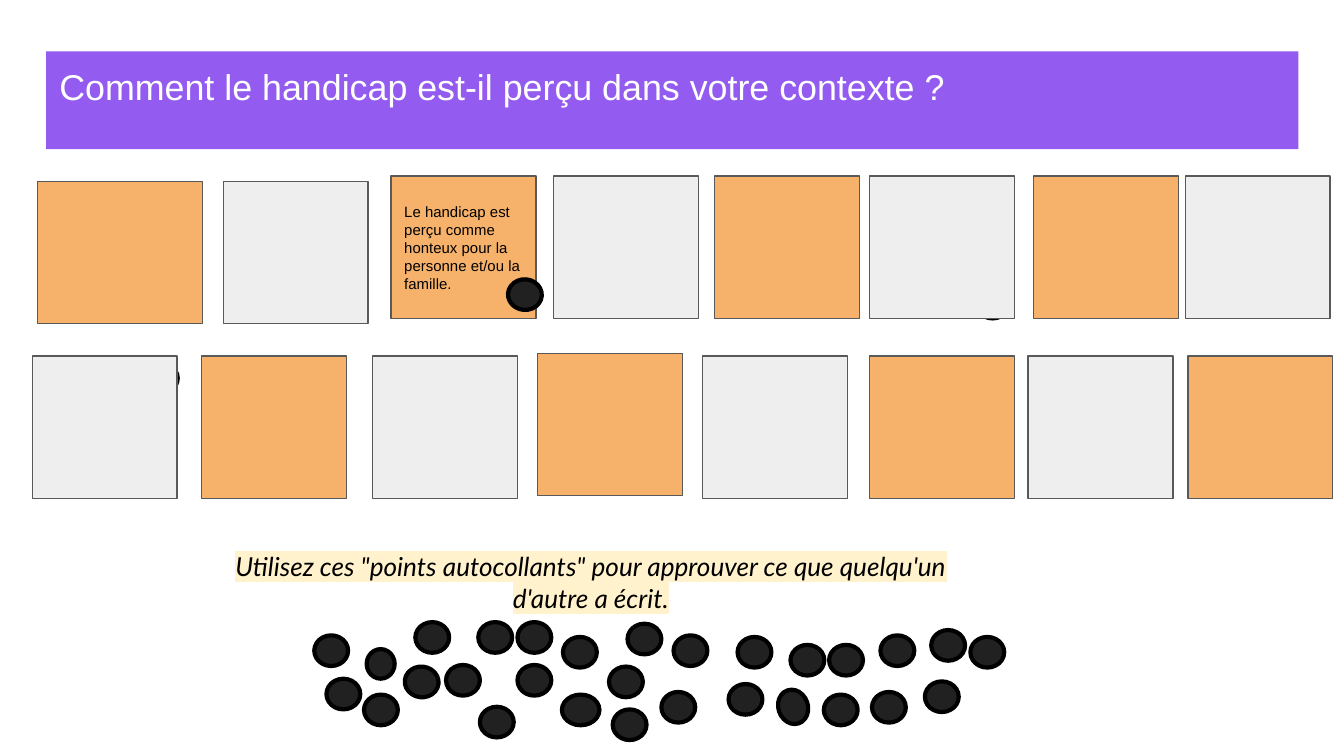
from typing import NamedTuple

from lxml.etree import SubElement
from pptx import Presentation
from pptx.dml.color import RGBColor
from pptx.enum.shapes import MSO_SHAPE
from pptx.enum.text import MSO_ANCHOR, MSO_AUTO_SIZE, PP_ALIGN
from pptx.oxml.ns import qn
from pptx.util import Cm, Pt

PURPLE = RGBColor(0x93, 0x5B, 0xEF)
ORANGE = RGBColor(0xF6, 0xB2, 0x6B)
GREY = RGBColor(0xEE, 0xEE, 0xEE)
BORDER = RGBColor(0x59, 0x59, 0x59)
INK = RGBColor(0x21, 0x21, 0x21)
BLACK = RGBColor(0, 0, 0)
WHITE = RGBColor(0xFF, 0xFF, 0xFF)
HIGHLIGHT = "FFF2CC"


class Card(NamedTuple):
    left: float
    top: float
    width: float = 2.74
    text: str = ""


class Dot(NamedTuple):
    left: float
    top: float
    width: float = 0.64
    height: float = 0.58
    rotation: float = 0


# Lengths in centimetres
CARD_HEIGHT = 2.69
TOP_ROW = [
    Card(0.71, 3.43, 3.12), Card(4.22, 3.43),
    Card(7.39, 3.33, text="Le handicap est perçu comme honteux pour la "
                          "personne et/ou la famille."),
    Card(10.46, 3.33), Card(13.51, 3.33), Card(16.43, 3.33),
    Card(19.53, 3.33), Card(22.4, 3.33),
]
BOTTOM_ROW = [
    Card(0.61, 6.73), Card(3.81, 6.73), Card(7.04, 6.73), Card(10.16, 6.68),
    Card(13.28, 6.73), Card(16.43, 6.73), Card(19.43, 6.73), Card(22.45, 6.73),
]
DOTS_BEHIND_CARDS = [Dot(2.72, 6.86), Dot(18.44, 5.44)]
DOTS = [
    Dot(9.6, 5.28, rotation=4.3),
    Dot(5.94, 12.01), Dot(6.93, 12.27, 0.53, 0.56), Dot(7.85, 11.76),
    Dot(9.04, 11.76), Dot(9.78, 11.76), Dot(10.64, 12.04), Dot(11.86, 11.79),
    Dot(12.73, 12.01), Dot(13.94, 12.04), Dot(14.94, 12.19), Dot(15.67, 12.19),
    Dot(16.64, 12.01), Dot(17.6, 11.91), Dot(18.34, 12.04),
    Dot(6.17, 12.83), Dot(6.88, 13.13), Dot(7.65, 12.6, rotation=6.9),
    Dot(8.43, 12.57), Dot(9.07, 13.36), Dot(9.78, 12.57),
    Dot(10.62, 13.13, 0.71), Dot(11.51, 12.6), Dot(11.58, 13.41),
    Dot(12.5, 13.08), Dot(13.77, 12.93), Dot(14.66, 13.08, 0.66, 0.56, 251.2),
    Dot(15.57, 13.13), Dot(16.48, 13.08), Dot(17.48, 12.88),
]


def write(sp, text: str, size: float, font: str, color: RGBColor,
          align=PP_ALIGN.LEFT, anchor=MSO_ANCHOR.TOP):
    """Fill the shape with one formatted paragraph and return its run."""
    tf = sp.text_frame
    tf.text = text
    tf.word_wrap = True
    tf.auto_size = MSO_AUTO_SIZE.NONE
    tf.vertical_anchor = anchor
    tf.margin_left = tf.margin_right = Cm(0.25)
    tf.margin_top = tf.margin_bottom = Cm(0.25)
    p = tf.paragraphs[0]
    p.alignment = align
    r = p.runs[0]
    r.font.size = Pt(size)
    r.font.name = font
    r.font.color.rgb = color
    return r


def add_outlined(s, kind, left: float, top: float, width: float, height: float,
                 fill: RGBColor, line: RGBColor, weight: float):
    sp = s.shapes.add_shape(kind, Cm(left), Cm(top), Cm(width), Cm(height))
    sp.shadow.inherit = False
    sp.fill.solid()
    sp.fill.fore_color.rgb = fill
    sp.line.color.rgb = line
    sp.line.width = Pt(weight)
    return sp


def add_cards(s, cards: list[Card], colors: tuple[RGBColor, RGBColor]) -> None:
    """Draw a row of cards in two alternating colours."""
    for i, card in enumerate(cards):
        sp = add_outlined(s, MSO_SHAPE.RECTANGLE, card.left, card.top,
                          card.width, CARD_HEIGHT, colors[i % 2], BORDER, 0.75)
        if card.text:
            write(sp, card.text, 8, "Arial", BLACK, anchor=MSO_ANCHOR.MIDDLE)


def add_dots(s, dots: list[Dot]) -> None:
    for dot in dots:
        sp = add_outlined(s, MSO_SHAPE.OVAL, dot.left, dot.top, dot.width,
                          dot.height, INK, BLACK, 2.25)
        sp.rotation = dot.rotation


def add_title(s) -> None:
    title = s.shapes.title
    title.left, title.top = Cm(0.87), Cm(0.97)
    title.width, title.height = Cm(23.67), Cm(1.85)
    title.fill.solid()
    title.fill.fore_color.rgb = PURPLE
    write(title, "Comment le handicap est-il perçu dans votre contexte ?",
          19.2, "Arial", WHITE)


def add_instruction(s) -> None:
    box = s.shapes.add_textbox(Cm(4.11), Cm(10.16), Cm(14.12), Cm(1.37))
    r = write(box, "Utilisez ces \"points autocollants\" pour approuver ce que "
                   "quelqu'un d'autre a écrit.",
              14, "Lato", BLACK, PP_ALIGN.CENTER)
    r.font.italic = True
    rPr = r.font._element
    highlight = SubElement(rPr, qn("a:highlight"))
    SubElement(highlight, qn("a:srgbClr")).set("val", HIGHLIGHT)
    rPr.find(qn("a:latin")).addprevious(highlight)


def main() -> None:
    prs = Presentation()
    prs.slide_width, prs.slide_height = Cm(25.4), Cm(14.29)
    s = prs.slides.add_slide(prs.slide_layouts[5])
    add_title(s)
    add_instruction(s)
    add_dots(s, DOTS_BEHIND_CARDS)
    add_cards(s, TOP_ROW, (ORANGE, GREY))
    add_cards(s, BOTTOM_ROW, (GREY, ORANGE))
    add_dots(s, DOTS)
    prs.save("out.pptx")


if __name__ == "__main__":
    main()
